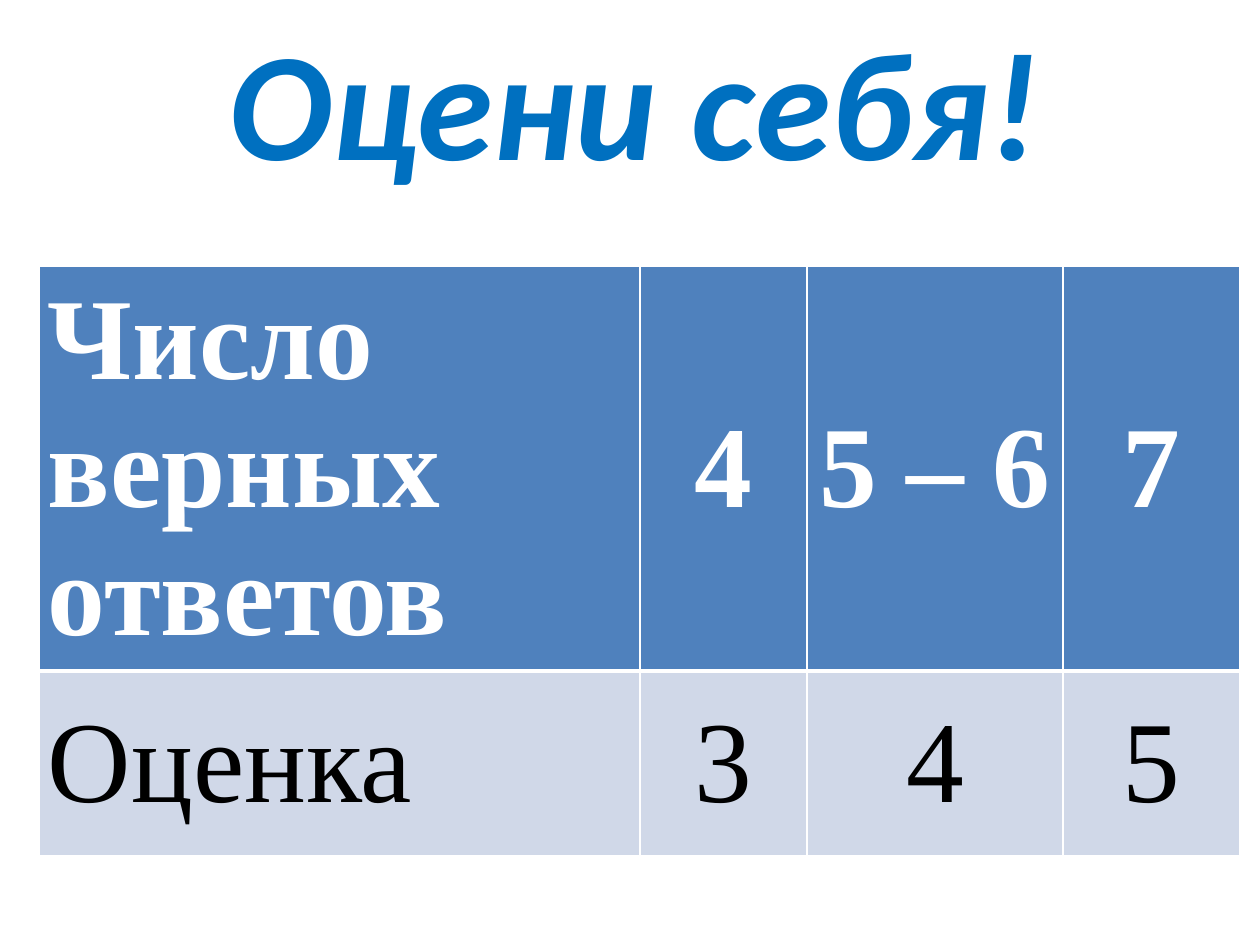
from lxml import etree
from pptx import Presentation
from pptx import util as u
from pptx.dml.color import RGBColor
from pptx.enum import text
from pptx.oxml.ns import qn

EMU_PER_PX = 914400 / 126
THEME = {
    "title": {"name": "Calibri", "size": u.Pt(88), "bold": True, "italic": True},
    "header": {"name": "Times New Roman", "size": u.Pt(66), "bold": True},
    "body": {"name": "Times New Roman", "size": u.Pt(66), "bold": False},
    "title_color": "0070C0",
    "header_color": "FFFFFF",
    "body_color": "000000",
    "header_fill": "4F81BD",
    "body_fill": "D0D8E8",
    "border": "FFFFFF",
}


def px(length):
    return u.Emu(round(length * EMU_PER_PX))


def style_paragraph(paragraph, role, alignment):
    paragraph.alignment = alignment
    font = paragraph.runs[0].font
    for name, value in THEME[role].items():
        setattr(font, name, value)
    font.color.rgb = RGBColor.from_string(THEME[role + "_color"])


presentation = Presentation()
presentation.slide_width, presentation.slide_height = px(1260), px(945)
slide = presentation.slides.add_slide(presentation.slide_layouts[5])

# Title
title = slide.shapes.title
title.left, title.top, title.width, title.height = px(39), px(38), px(1191), px(160)
frame = title.text_frame
frame.text = "Оцени себя!"
frame.word_wrap = True
frame.auto_size = text.MSO_AUTO_SIZE.NONE
frame.vertical_anchor = text.MSO_ANCHOR.BOTTOM
style_paragraph(frame.paragraphs[0], "title", text.PP_ALIGN.CENTER)

# Grading table
rows = [["Число верных ответов", "4", "5 – 6", "7"], ["Оценка", "3", "4", "5"]]
column_widths = [601, 167, 256, 177]
row_heights = [405, 185]
table = slide.shapes.add_table(
    len(rows), len(column_widths), px(39), px(266),
    px(sum(column_widths)), px(sum(row_heights))).table
for column, width in zip(table.columns, column_widths):
    column.width = px(width)
for row, height in zip(table.rows, row_heights):
    row.height = px(height)

cell_format = {
    "margin_left": px(9), "margin_right": px(9), "margin_top": 0,
    "margin_bottom": 0, "vertical_anchor": text.MSO_ANCHOR.MIDDLE,
}
for row_index, values in enumerate(rows):
    role = "body" if row_index else "header"
    for column_index, value in enumerate(values):
        cell = table.cell(row_index, column_index)
        cell.text = value
        for name, setting in cell_format.items():
            setattr(cell, name, setting)
        alignment = text.PP_ALIGN.CENTER if column_index else text.PP_ALIGN.LEFT
        style_paragraph(cell.text_frame.paragraphs[0], role, alignment)

        # Borders, with a thick rule under the header; they precede the fill
        properties = cell._tc.get_or_add_tcPr()
        thick_side = "lnT" if row_index else "lnB"
        for side in ("lnL", "lnR", "lnT", "lnB"):
            width = u.Pt(3 if side == thick_side else 1)
            line = etree.SubElement(properties, qn("a:" + side), w=str(int(width)))
            solid = etree.SubElement(line, qn("a:solidFill"))
            etree.SubElement(solid, qn("a:srgbClr"), val=THEME["border"])
        cell.fill.solid()
        cell.fill.fore_color.rgb = RGBColor.from_string(THEME[role + "_fill"])

presentation.save("out.pptx")
